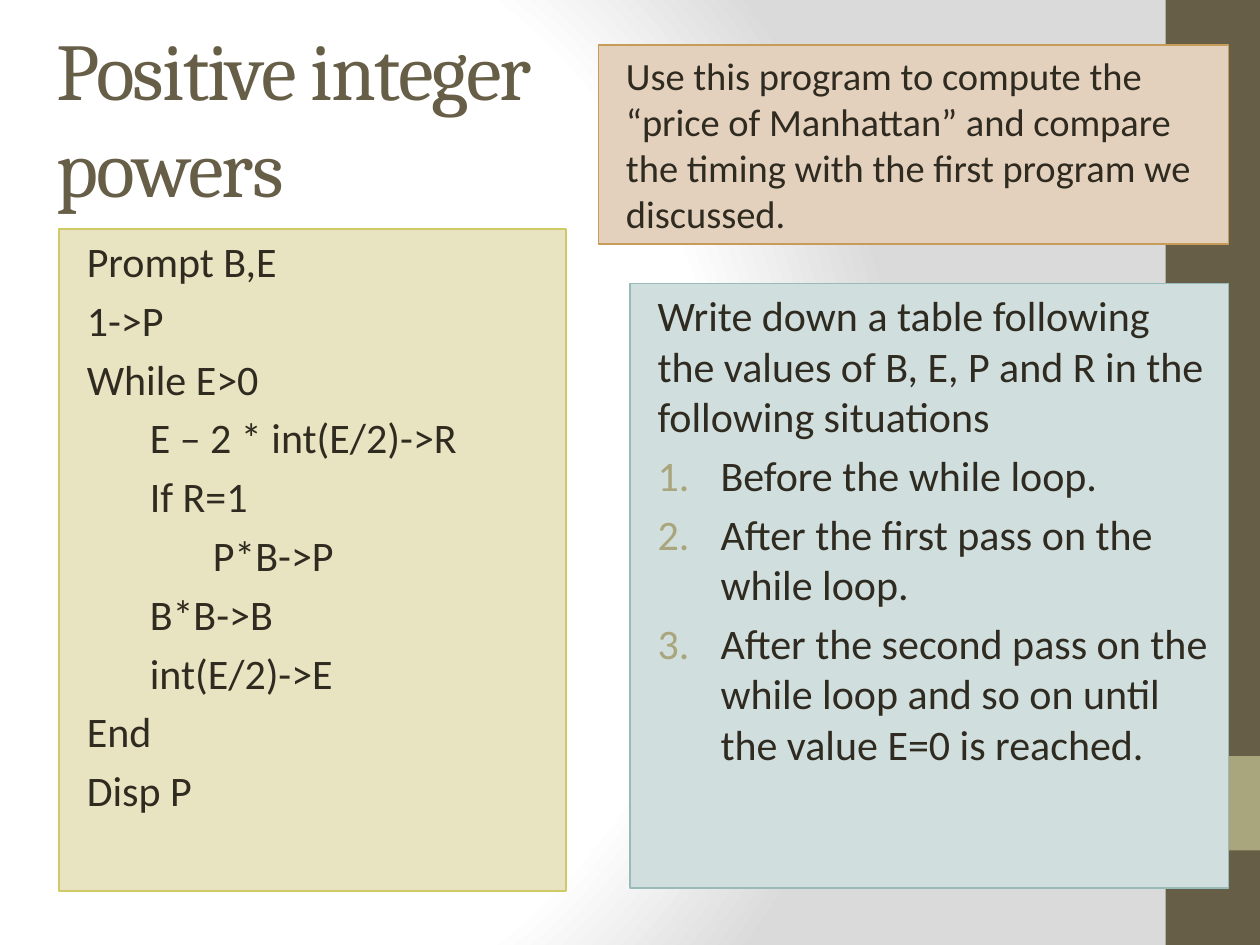
from dataclasses import dataclass

from lxml import etree
from pptx import Presentation
from pptx.dml.color import RGBColor
from pptx.enum.shapes import MSO_SHAPE
from pptx.enum.text import MSO_ANCHOR, MSO_AUTO_SIZE, PP_ALIGN
from pptx.oxml.ns import qn
from pptx.util import Inches, Pt

RECT = MSO_SHAPE.RECTANGLE
TOP, MIDDLE = MSO_ANCHOR.TOP, MSO_ANCHOR.MIDDLE
LEFT = PP_ALIGN.LEFT
GROW = MSO_AUTO_SIZE.SHAPE_TO_FIT_TEXT


@dataclass(frozen=True)
class Theme:
    heading_font: str = "Cambria"
    body_font: str = "Calibri"
    title_size: int = 46
    body_size: int = 24
    note_size: int = 22
    ink: str = "2F2B20"
    brown: str = "675E47"
    olive: str = "A9A57C"
    code: tuple = ("E8E4C1", "D0C967")
    task: tuple = ("D0DEDE", "98BBBA")
    note: tuple = ("E3D1BD", "C69C58")
    background: tuple = ((0, "FFFFFF"), (75, "FFFFFF"), (100, "DADADA"))


T = Theme()

CODE = [
    "Prompt B,E",
    "1->P",
    "While E>0",
    "\tE – 2 * int(E/2)->R",
    "\tIf R=1",
    "\t\tP*B->P",
    "\tB*B->B",
    "\tint(E/2)->E",
    "End",
    "Disp P",
]
TASK = "Write down a table following the values of B, E, P and R in the following situations"
SITUATIONS = [
    "Before the while loop.",
    "After the first pass on the while loop.",
    "After the second pass on the while loop and so on until the value E=0 is reached.",
]
NOTE = ("Use this program to compute the “price of Manhattan” and compare "
        "the timing with the first program we discussed.")


def sub(parent, tag, **attrs):
    return etree.SubElement(parent, qn(tag), {k: str(v) for k, v in attrs.items()})


def set_background(s):
    """Radial gradient spreading from the left part of the slide."""
    s.background.fill.gradient()
    grad = s.element.find(".//" + qn("a:gradFill"))
    for child in list(grad):
        grad.remove(child)
    stops = sub(grad, "a:gsLst")
    for pos, color in T.background:
        sub(sub(stops, "a:gs", pos=pos * 1000), "a:srgbClr", val=color)
    circle = sub(grad, "a:path", path="circle")
    sub(circle, "a:fillToRect", l=20000, t=50000, r=100000, b=50000)


def add_rect(s, x, y, w, h, fill, line=None):
    sp = s.shapes.add_shape(RECT, Inches(x), Inches(y), Inches(w), Inches(h))
    sp.shadow.inherit = False
    sp.fill.solid()
    sp.fill.fore_color.rgb = RGBColor.from_string(fill)
    if line:
        sp.line.color.rgb = RGBColor.from_string(line)
        sp.line.width = Pt(1)
    else:
        sp.line.fill.background()
    return sp


def add_text(p, text, *, size=T.body_size, font=T.body_font, color=T.ink,
             spacing=0, margin=0.12, hanging=0, before=0.2, numbered=False):
    """Fill a paragraph; before is a share of the type size."""
    p.alignment = LEFT
    p.space_before = Pt(size * before)
    pPr = p._p.get_or_add_pPr()
    pPr.set("marL", str(Inches(margin + hanging)))
    pPr.set("indent", str(Inches(-hanging)))
    if numbered:
        sub(sub(pPr, "a:buClr"), "a:srgbClr", val=T.olive)
        sub(pPr, "a:buFont", typeface=font)
        sub(pPr, "a:buAutoNum", type="arabicPeriod")
    else:
        sub(pPr, "a:buNone")
    r = p.add_run()
    r.text = text
    r.font.size = Pt(size)
    r.font.name = font
    r.font.color.rgb = RGBColor.from_string(color)
    if spacing:
        r.font._element.set("spc", str(spacing * 100))


def add_paragraphs(sp, items, anchor=TOP):
    """Write (text, format) pairs into a shape, one paragraph each."""
    tf = sp.text_frame
    tf.word_wrap = True
    tf.vertical_anchor = anchor
    for i, (text, fmt) in enumerate(items):
        p = tf.add_paragraph() if i else tf.paragraphs[0]
        add_text(p, text, **fmt)


def add_title(s, text):
    sp = s.shapes.add_textbox(Inches(0.35), Inches(0.3), Inches(5.53), Inches(1.25))
    fmt = dict(size=T.title_size, font=T.heading_font, color=T.brown,
               spacing=-1, margin=0, before=0)
    add_paragraphs(sp, [(text, fmt)], MIDDLE)


def main():
    prs = Presentation()
    prs.slide_width, prs.slide_height = Inches(10), Inches(7.5)
    s = prs.slides.add_slide(prs.slide_layouts[6])
    set_background(s)
    add_rect(s, 9.25, 0, 0.75, 7.5, T.brown)
    add_rect(s, 9.25, 6, 0.75, 0.75, T.olive)
    add_title(s, "Positive integer powers")

    code = add_rect(s, 0.47, 1.82, 4.02, 5.25, *T.code)
    add_paragraphs(code, [(line, {}) for line in CODE])

    task = add_rect(s, 5, 2.25, 4.75, 4.8, *T.task)
    step = dict(hanging=0.5, numbered=True)
    add_paragraphs(task, [(TASK, {})] + [(text, step) for text in SITUATIONS])

    note = add_rect(s, 4.75, 0.36, 5, 1.58, *T.note)
    add_paragraphs(note, [(NOTE, dict(size=T.note_size))])
    note.text_frame.auto_size = GROW

    prs.save("out.pptx")


if __name__ == "__main__":
    main()
